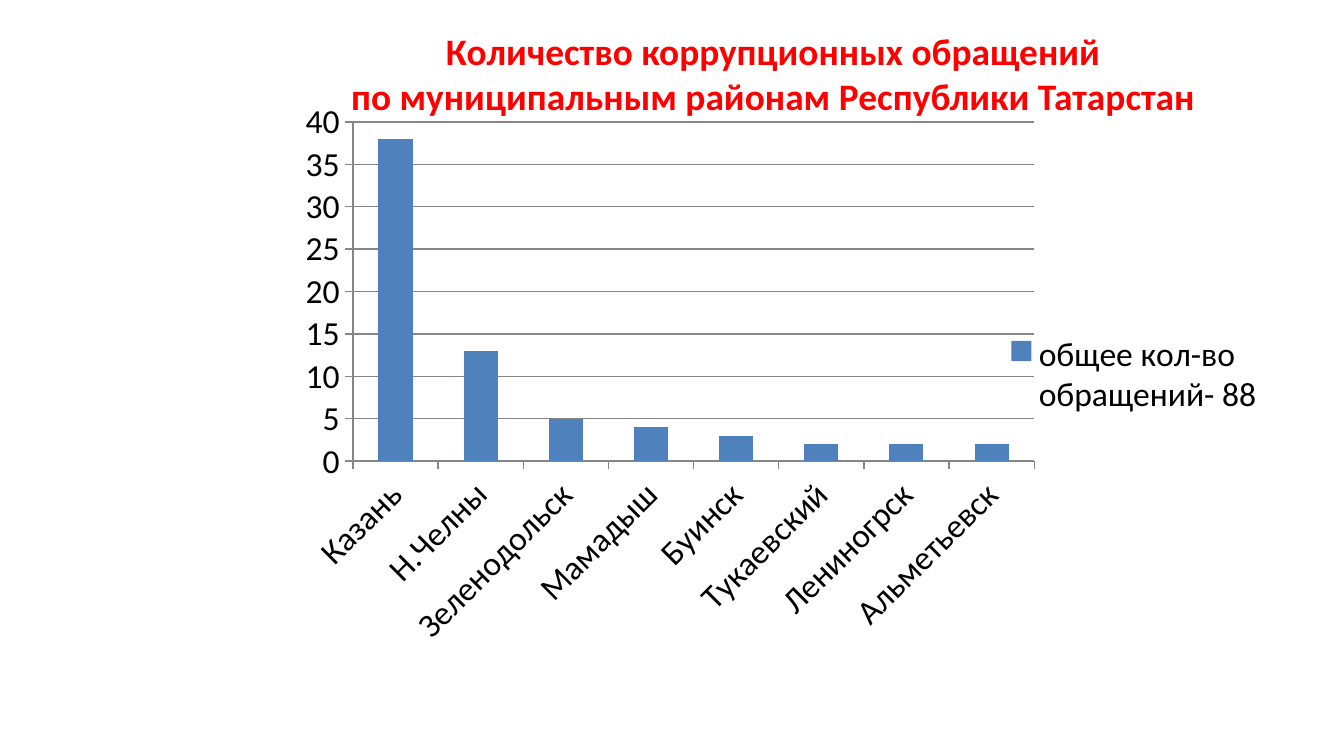
from lxml.etree import SubElement
from pptx import Presentation
from pptx.chart.data import CategoryChartData
from pptx.dml.color import RGBColor
from pptx.enum.chart import XL_CHART_TYPE, XL_LEGEND_POSITION, XL_TICK_MARK
from pptx.enum.text import MSO_ANCHOR, PP_ALIGN
from pptx.oxml.ns import qn
from pptx.util import Inches, Pt

RED = RGBColor(0xFF, 0x00, 0x00)
BLACK = RGBColor(0x00, 0x00, 0x00)
GRAY = RGBColor(0x86, 0x86, 0x86)
BLUE = RGBColor(0x4F, 0x81, 0xBD)
FONT = "Calibri"

TITLE_LINES = [
    "Количество коррупционных обращений ",
    "по муниципальным районам Республики Татарстан ",
]
SERIES_NAME = "общее кол-во обращений- 88"
APPEALS = {
    "Казань": 38,
    "Н.Челны": 13,
    "Зеленодольск": 5,
    "Мамадыш": 4,
    "Буинск": 3,
    "Тукаевский": 2,
    "Лениногрск": 2,
    "Альметьевск": 2,
}


def place_title(title, left, top, width, height):
    title.left, title.top = Inches(left), Inches(top)
    title.width, title.height = Inches(width), Inches(height)
    frame = title.text_frame
    frame.word_wrap = True
    frame.vertical_anchor = MSO_ANCHOR.TOP
    frame.text = "\n".join(TITLE_LINES)
    for para in frame.paragraphs:
        para.alignment = PP_ALIGN.CENTER
        para.line_spacing = 1.0
        para.space_before = Pt(0)
        para.font.name = FONT
        para.font.size = Pt(20)
        para.font.bold = True
        para.font.color.rgb = RED


def set_layout(parent, index, x, y, w, h, inner=False):
    """Fix a chart part at fractions of the chart's size."""
    for old in parent.findall(qn("c:layout")):
        parent.remove(old)
    layout = SubElement(parent, qn("c:layout"))
    parent.insert(index, layout)
    manual = SubElement(layout, qn("c:manualLayout"))
    settings = {"layoutTarget": "inner"} if inner else {}
    settings.update(xMode="edge", yMode="edge", x=x, y=y, w=w, h=h)
    for tag, value in settings.items():
        SubElement(manual, qn(f"c:{tag}")).set("val", str(value))


def add_appeals_chart(page, left, top, width, height):
    data = CategoryChartData()
    data.categories = list(APPEALS)
    data.add_series(SERIES_NAME, list(APPEALS.values()))
    chart = page.shapes.add_chart(
        XL_CHART_TYPE.COLUMN_CLUSTERED,
        Inches(left), Inches(top), Inches(width), Inches(height), data,
    ).chart
    chart.has_title = False
    chart.font.name = FONT
    chart.font.size = Pt(18)
    chart.font.color.rgb = BLACK

    plot = chart.plots[0]
    plot.gap_width = 150
    plot.vary_by_categories = False
    fill = plot.series[0].format.fill
    fill.solid()
    fill.fore_color.rgb = BLUE

    values, names = chart.value_axis, chart.category_axis
    values.minimum_scale, values.maximum_scale, values.major_unit = 0, 40, 5
    values.has_major_gridlines = True
    for line in (values.format.line, names.format.line,
                 values.major_gridlines.format.line):
        line.color.rgb = GRAY
        line.width = Pt(0.75)
    for axis in (values, names):
        axis.major_tick_mark = XL_TICK_MARK.OUTSIDE
        axis.minor_tick_mark = XL_TICK_MARK.NONE
    names.tick_labels.font.size = Pt(18)
    label_body = names._element.find(qn("c:txPr")).find(qn("a:bodyPr"))
    label_body.set("rot", str(-45 * 60000))

    chart.has_legend = True
    legend = chart.legend
    legend.position = XL_LEGEND_POSITION.RIGHT
    legend.include_in_layout = False
    set_layout(legend._element, 1, 0.74, 0.42, 0.25, 0.14)
    plot_area = chart._chartSpace.find(qn("c:chart")).find(qn("c:plotArea"))
    set_layout(plot_area, 0, 0.12, 0.08, 0.65, 0.55, inner=True)


def main():
    deck = Presentation()
    deck.slide_width = Inches(10)
    deck.slide_height = deck.slide_width * 9 // 16
    page = deck.slides.add_slide(deck.slide_layouts[5])
    place_title(page.shapes.title, 1.85, 0.16, 7.87, 0.77)
    add_appeals_chart(page, 1.69, 0.54, 7.8, 4.59)
    deck.save("out.pptx")


if __name__ == "__main__":
    main()
